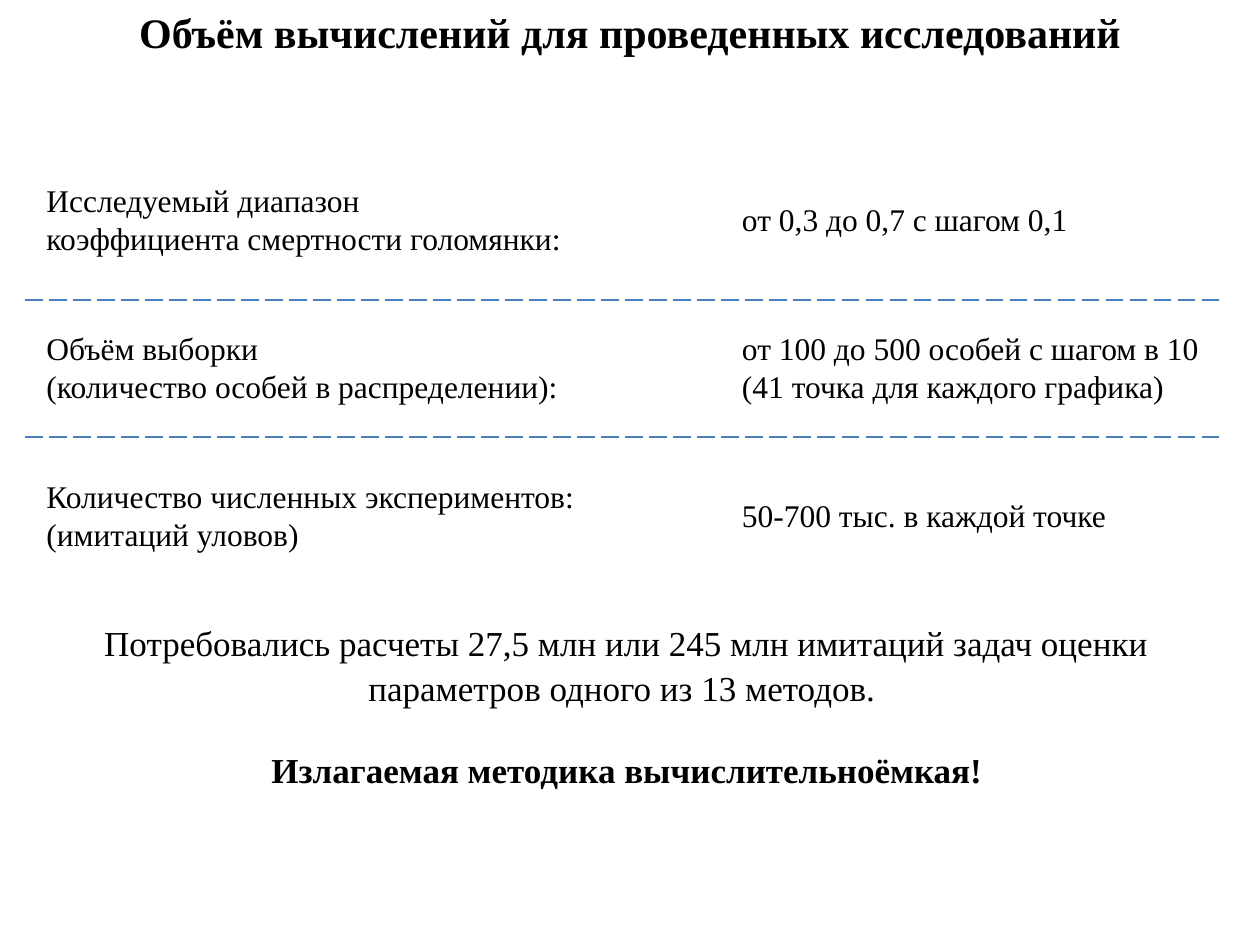
from lxml.etree import SubElement
from pptx import Presentation
from pptx.dml.color import RGBColor
from pptx.enum.dml import MSO_LINE
from pptx.enum.shapes import MSO_CONNECTOR
from pptx.enum.text import MSO_ANCHOR, MSO_AUTO_SIZE, PP_ALIGN
from pptx.oxml.ns import qn
from pptx.util import Inches, Pt

BLACK = RGBColor(0x00, 0x00, 0x00)
BLUE = RGBColor(0x4B, 0x7E, 0xBC)
FONT = "Times New Roman"

# Parameter grid: left edges of the columns, row centres, text heights
LABEL_LEFT, LABEL_WIDTH = 0.27, 4.42
VALUE_LEFT = 5.79
TEXT_HEIGHTS = {1: 0.4, 2: 0.71}
RULE_LEFT, RULE_RIGHT = 0.2, 9.72
RULES = (2.38, 3.47)

# Row centre, label lines, value lines, value width
PARAMETERS = [
    (1.74, ["Исследуемый диапазон", "коэффициента смертности голомянки:"],
     ["от 0,3 до 0,7 с шагом 0,1"], 2.81),
    (2.92, ["Объём выборки", "(количество особей в распределении):"],
     ["от 100 до 500 особей с шагом в 10", "(41 точка для каждого графика)"], 3.88),
    (4.09, ["Количество численных экспериментов:", "(имитаций уловов)"],
     ["50-700 тыс. в каждой точке"], 3.11),
]


def format_paragraph(paragraph, size, bold=False, align=PP_ALIGN.LEFT):
    paragraph.alignment = align
    font = paragraph.font
    font.name, font.size, font.bold = FONT, Pt(size), bold
    font.color.rgb = BLACK


def add_title(slide, text, width):
    title = slide.shapes.title
    title.left, title.top, title.width, title.height = 0, 0, width, Inches(0.5)
    frame = title.text_frame
    frame.text = text
    frame.auto_size = MSO_AUTO_SIZE.NONE
    frame.vertical_anchor = MSO_ANCHOR.TOP
    format_paragraph(frame.paragraphs[0], 24, True, PP_ALIGN.CENTER)


def add_text(slide, lines, left, top, width, height, size, bold=False,
             align=PP_ALIGN.LEFT):
    box = slide.shapes.add_textbox(*map(Inches, (left, top, width, height)))
    frame = box.text_frame
    frame.word_wrap = True
    frame.text = "\n".join(lines)
    for paragraph in frame.paragraphs:
        format_paragraph(paragraph, size, bold, align)
    return frame


def add_cell(slide, lines, left, centre, width):
    height = TEXT_HEIGHTS[len(lines)]
    add_text(slide, lines, left, centre - height / 2, width, height, 18)


def add_rule(slide, y):
    rule = slide.shapes.add_connector(
        MSO_CONNECTOR.STRAIGHT, Inches(RULE_LEFT), Inches(y),
        Inches(RULE_RIGHT), Inches(y))
    rule.line.color.rgb = BLUE
    rule.line.width = Pt(1.25)
    rule.line.dash_style = MSO_LINE.LONG_DASH
    SubElement(rule._element.spPr, qn("a:effectLst"))


def add_conclusion(slide, text, left, top, width, height, bold=False):
    frame = add_text(slide, [text], left, top, width, height, 20, bold,
                     PP_ALIGN.CENTER)
    frame.paragraphs[0].line_spacing = 1.07
    frame.paragraphs[0].space_after = Pt(8)


def main():
    prs = Presentation()
    prs.slide_width, prs.slide_height = Inches(10), Inches(7.5)
    slide = prs.slides.add_slide(prs.slide_layouts[5])

    add_title(slide, "Объём вычислений для проведенных исследований",
              prs.slide_width)

    # Studied parameters, separated by dashed rules
    for centre, label, value, value_width in PARAMETERS:
        add_cell(slide, label, LABEL_LEFT, centre, LABEL_WIDTH)
        add_cell(slide, value, VALUE_LEFT, centre, value_width)
    for y in RULES:
        add_rule(slide, y)

    # Conclusions
    add_conclusion(slide, "Потребовались расчеты 27,5 млн или 245 млн имитаций "
                   "задач оценки параметров одного из 13 методов. ",
                   LABEL_LEFT, 4.86, 9.4, 0.82)
    add_conclusion(slide, "Излагаемая методика вычислительноёмкая!",
                   1.93, 5.87, 6.09, 0.46, bold=True)

    prs.save("out.pptx")


if __name__ == "__main__":
    main()
